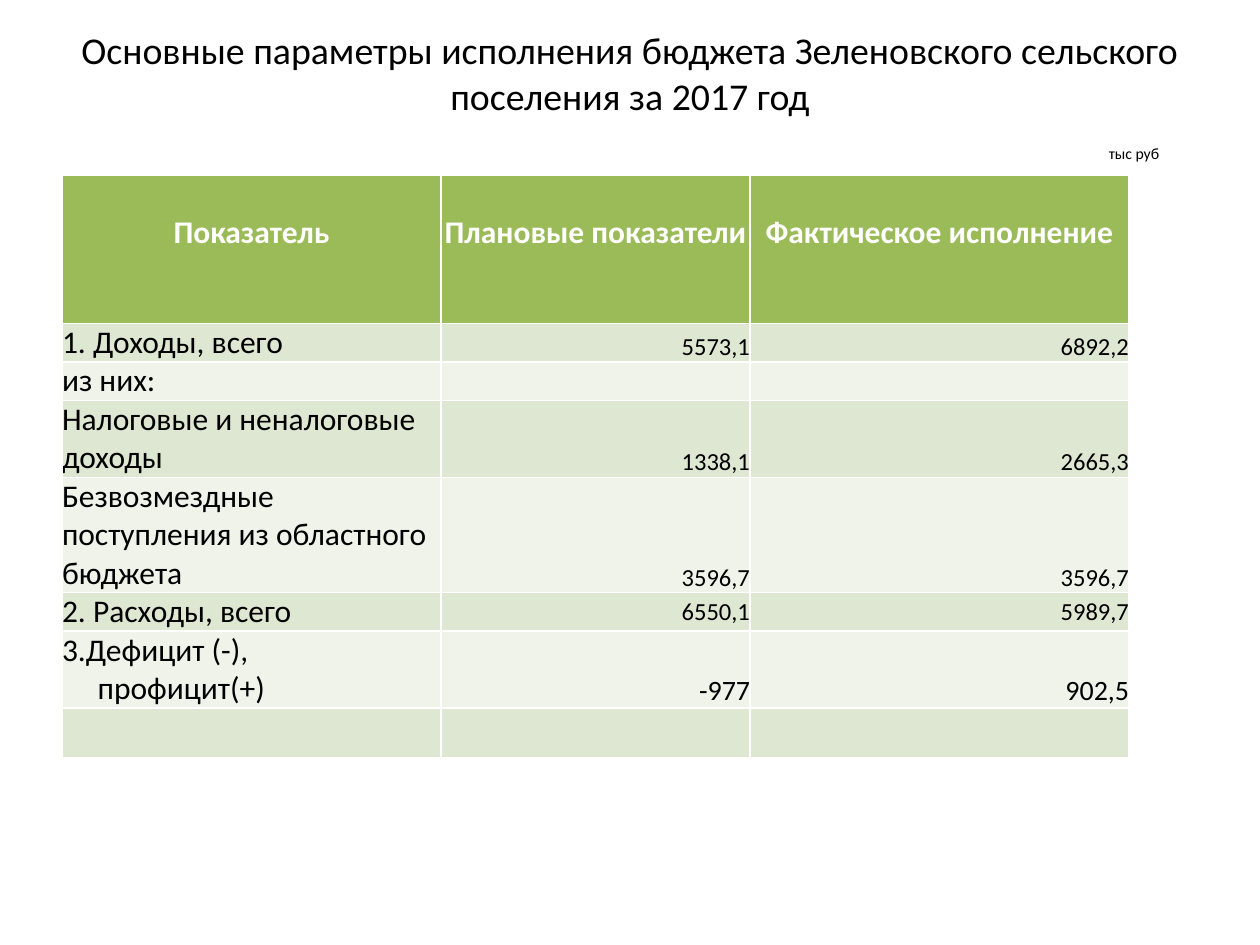
"""Build the slide with the main figures of a rural settlement's budget."""
from dataclasses import dataclass

from pptx import Presentation
from pptx import util as u
from pptx.dml.color import RGBColor
from pptx.enum import text as t

FONT = "Calibri"
BLACK, WHITE, GREEN = "000000", "FFFFFF", "9BBB59"
BANDS = ("DEE7D1", "EFF3EA")
COLUMN_WIDTHS = (7.64, 6.23, 7.64)
HEADER_HEIGHT = 2.99
HEADINGS = ("Показатель", "Плановые показатели", "Фактическое исполнение")


@dataclass(frozen=True)
class Indicator:
    lines: tuple = ()
    plan: str = ""
    actual: str = ""
    height: float = 0.76
    size: int = 14
    anchor: t.MSO_ANCHOR = t.MSO_ANCHOR.BOTTOM


INDICATORS = (
    Indicator(("1. Доходы, всего",), "5573,1", "6892,2"),
    Indicator(("из них:",)),
    Indicator(("Налоговые и неналоговые доходы",), "1338,1", "2665,3", height=1.51),
    Indicator(("Безвозмездные поступления из областного бюджета",),
              "3596,7", "3596,7", height=2.27),
    Indicator(("2. Расходы, всего",), "6550,1", "5989,7", anchor=t.MSO_ANCHOR.TOP),
    Indicator(("3.Дефицит (-),", "профицит(+)"), "-977", "902,5", height=1.51, size=16),
    Indicator(height=1),
)


def rgb(value: str) -> RGBColor:
    return RGBColor.from_string(value)


def write(frame, content: str, *, size: float = 18, color: str = BLACK,
          bold: bool = False, align=t.PP_ALIGN.LEFT, spacing: float = 1,
          before: float = 0, indent: float = 0) -> None:
    first = frame.paragraphs[0]
    paragraph = frame.add_paragraph() if first.runs else first
    paragraph.alignment = align
    paragraph.line_spacing = spacing
    paragraph.space_before = u.Pt(before)
    if indent:
        paragraph._p.get_or_add_pPr().set("marL", str(u.Cm(indent)))
    run = paragraph.add_run()
    run.text = content
    run.font.name = FONT
    run.font.size = u.Pt(size)
    run.font.bold = bold
    run.font.color.rgb = rgb(color)


def prepare(cell, fill: str, anchor=t.MSO_ANCHOR.TOP, top: float = 0) -> None:
    cell.margin_left = cell.margin_right = cell.margin_bottom = 0
    cell.margin_top = u.Cm(top)
    cell.vertical_anchor = anchor
    cell.fill.solid()
    cell.fill.fore_color.rgb = rgb(fill)


def draw_title(slide) -> None:
    title = slide.shapes.title
    title.left, title.top = u.Cm(1.27), u.Cm(0.76)
    title.width, title.height = u.Cm(22.86), u.Cm(2.31)
    frame = title.text_frame
    frame.word_wrap = True
    frame.auto_size = t.MSO_AUTO_SIZE.NONE
    frame.vertical_anchor = t.MSO_ANCHOR.MIDDLE
    write(frame, "Основные параметры исполнения бюджета Зеленовского сельского "
          "поселения за 2017 год", size=21.6, align=t.PP_ALIGN.CENTER)
    write(frame, "тыс руб", size=9, align=t.PP_ALIGN.CENTER, before=15, indent=20.32)


def draw_indicator(row, indicator: Indicator, band: str) -> None:
    row.height = u.Cm(indicator.height)
    label, *amounts = row.cells
    prepare(label, band)
    for number, line in enumerate(indicator.lines):
        write(label.text_frame, line, indent=0.72 * number)
    for cell, amount in zip(amounts, (indicator.plan, indicator.actual)):
        prepare(cell, band, indicator.anchor)
        if amount:
            write(cell.text_frame, amount, size=indicator.size,
                  align=t.PP_ALIGN.RIGHT, spacing=1.15)


def draw_budget(slide) -> None:
    height = HEADER_HEIGHT + sum(indicator.height for indicator in INDICATORS)
    budget = slide.shapes.add_table(
        len(INDICATORS) + 1, len(HEADINGS), u.Cm(1.25), u.Cm(3.53),
        u.Cm(sum(COLUMN_WIDTHS)), u.Cm(height)).table
    for column, width in zip(budget.columns, COLUMN_WIDTHS):
        column.width = u.Cm(width)
    header, *rows = budget.rows
    header.height = u.Cm(HEADER_HEIGHT)
    for cell, heading in zip(header.cells, HEADINGS):
        prepare(cell, GREEN, top=0.77)
        write(cell.text_frame, heading, color=WHITE, bold=True, align=t.PP_ALIGN.CENTER)
    for number, (row, indicator) in enumerate(zip(rows, INDICATORS)):
        draw_indicator(row, indicator, BANDS[number % 2])


def main() -> None:
    deck = Presentation()
    deck.slide_width, deck.slide_height = u.Cm(25.4), u.Cm(19.05)
    slide = deck.slides.add_slide(deck.slide_layouts[5])
    draw_title(slide)
    draw_budget(slide)
    deck.save("out.pptx")


if __name__ == "__main__":
    main()
